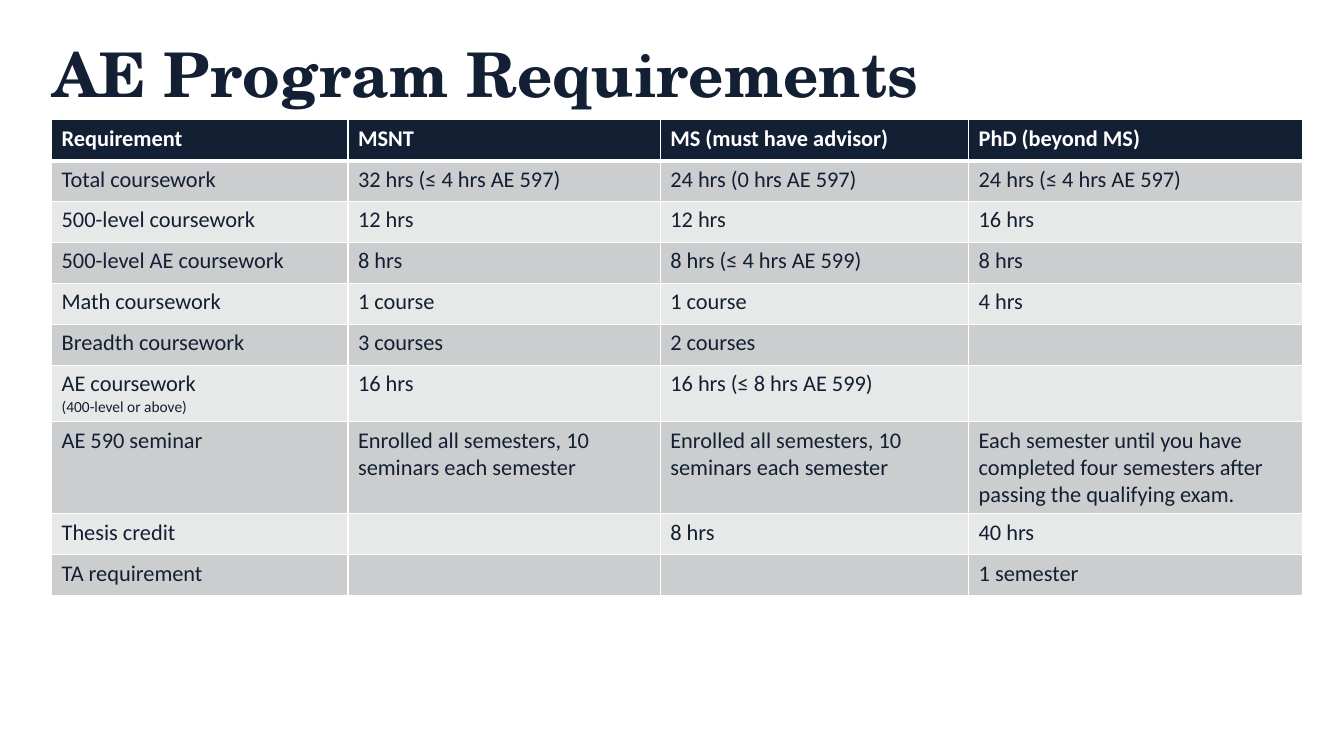
"""Build the AE program requirements slide."""
from dataclasses import dataclass
from lxml import etree
from pptx import Presentation
from pptx import util as u
from pptx.dml.color import RGBColor
from pptx.enum import text
from pptx.oxml.ns import qn

TITLE = "AE Program Requirements"
ROWS = [
    ("Requirement", "MSNT", "MS (must have advisor)", "PhD (beyond MS)"),
    ("Total coursework", "32 hrs (≤ 4 hrs AE 597)", "24 hrs (0 hrs AE 597)", "24 hrs (≤ 4 hrs AE 597)"),
    ("500-level coursework", "12 hrs", "12 hrs", "16 hrs"),
    ("500-level AE coursework", "8 hrs", "8 hrs (≤ 4 hrs AE 599)", "8 hrs"),
    ("Math coursework", "1 course", "1 course", "4 hrs"),
    ("Breadth coursework", "3 courses", "2 courses", ""),
    ("AE coursework \v(400-level or above)", "16 hrs", "16 hrs (≤ 8 hrs AE 599)", ""),
    ("AE 590 seminar",
     "Enrolled all semesters, 10 seminars each semester",
     "Enrolled all semesters, 10 seminars each semester",
     "Each semester until you have completed four semesters after passing the qualifying exam."),
    ("Thesis credit", "", "8 hrs", "40 hrs"),
    ("TA requirement", "", "", "1 semester"),
]
WIDTHS = (7.47, 7.87, 7.77, 8.41)
HEIGHT = 1.03
TALL = {6: 1.41, 7: 2.32}


@dataclass
class Theme:
    """Colours, fonts and type sizes of the slide."""
    navy: str = "131F33"
    white: str = "FFFFFF"
    bands: tuple = ("E7E8E8", "CCCDCE")
    serif: str = "TeX Gyre Schola"
    sans: str = "Calibri"
    head: int = 44
    body: int = 16
    note: int = 11


THEME = Theme()


def style(run, font, size, color, bold):
    """Set the look of one run."""
    run.font.name = font
    run.font.size = u.Pt(size)
    run.font.color.rgb = RGBColor.from_string(color)
    run.font.bold = bold


def border(cell, side, width):
    """Draw one white edge of a cell."""
    props = cell._tc.get_or_add_tcPr()
    line = etree.SubElement(props, qn("a:ln" + side), w=str(u.Pt(width)))
    fill = etree.SubElement(line, qn("a:solidFill"))
    etree.SubElement(fill, qn("a:srgbClr"), val=THEME.white)


def fill_cell(cell, words, row):
    """Write, colour and frame one table cell."""
    top = row == 0
    for side in "LRTB":
        thick = (top and side == "B") or (row == 1 and side == "T")
        border(cell, side, 3 if thick else 1)
    cell.fill.solid()
    cell.fill.fore_color.rgb = RGBColor.from_string(THEME.navy if top else THEME.bands[row % 2])
    cell.text_frame.text = words
    para = cell.text_frame.paragraphs[0]
    for i, run in enumerate(para.runs):
        size = THEME.note if i else THEME.body
        style(run, THEME.sans, size, THEME.white if top else THEME.navy, top)
    for gap in para._p.findall(qn("a:br")):
        etree.SubElement(gap, qn("a:rPr"), sz=str(THEME.body * 100))


def add_title(slide):
    """Place and format the title."""
    title = slide.shapes.title
    title.left, title.top = u.Cm(1.07), u.Cm(0)
    title.width, title.height = u.Cm(31.83), u.Cm(3.68)
    frame = title.text_frame
    frame.text = TITLE
    frame.auto_size = text.MSO_AUTO_SIZE.NONE
    frame.vertical_anchor = text.MSO_ANCHOR.MIDDLE
    para = frame.paragraphs[0]
    para.alignment = text.PP_ALIGN.LEFT
    style(para.runs[0], THEME.serif, THEME.head, THEME.navy, True)


def add_grid(slide):
    """Place and fill the requirements table."""
    highs = [TALL.get(i, HEIGHT) for i in range(len(ROWS))]
    table = slide.shapes.add_table(
        len(ROWS), len(WIDTHS), u.Cm(1.3), u.Cm(3.02),
        u.Cm(sum(WIDTHS)), u.Cm(sum(highs))).table
    for col, width in zip(table.columns, WIDTHS):
        col.width = u.Cm(width)
    for r, (high, words) in enumerate(zip(highs, ROWS)):
        table.rows[r].height = u.Cm(high)
        for c, word in enumerate(words):
            fill_cell(table.cell(r, c), word, r)


def main():
    """Build and save the slide."""
    deck = Presentation()
    deck.slide_width, deck.slide_height = u.Cm(33.87), u.Cm(19.05)
    slide = deck.slides.add_slide(deck.slide_layouts[5])
    add_title(slide)
    add_grid(slide)
    deck.save("out.pptx")


if __name__ == "__main__":
    main()
